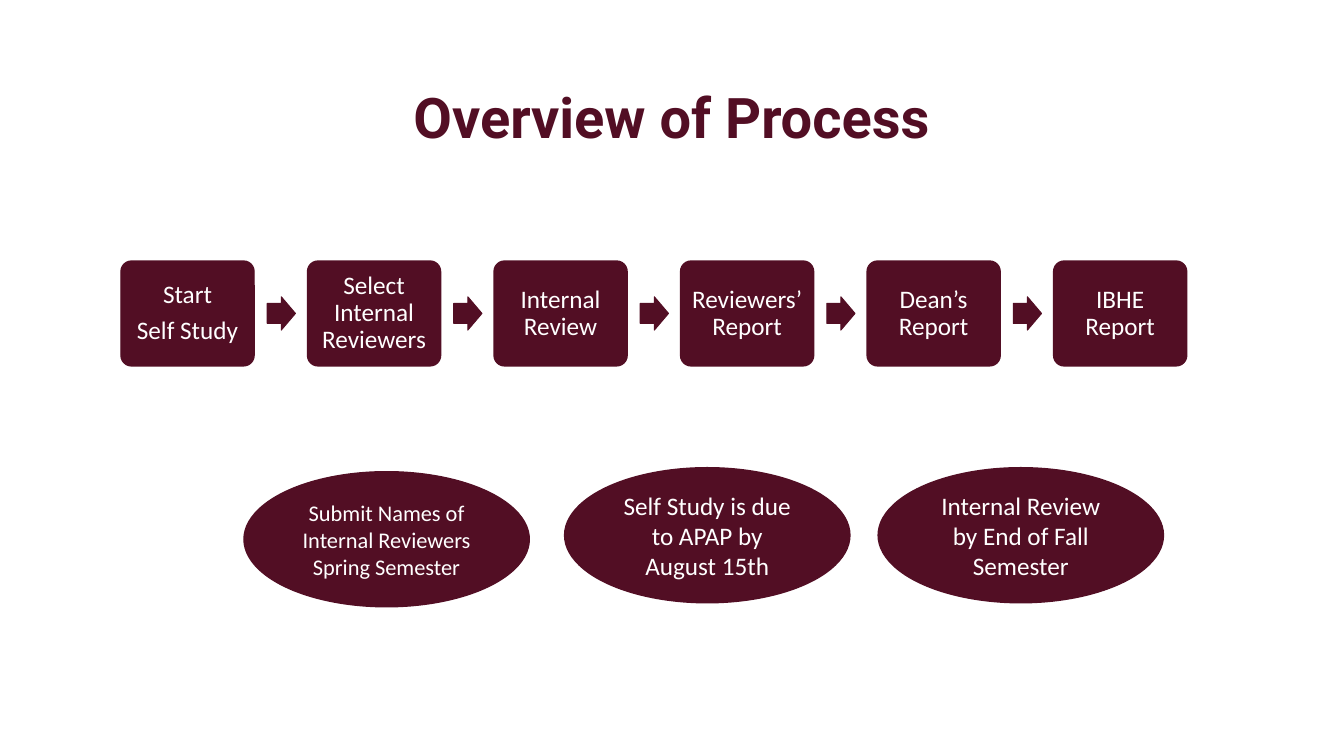
import dataclasses

import pptx
import pptx.dml.color
import pptx.enum.shapes
import pptx.enum.text
import pptx.util

Inches = pptx.util.Inches
Pt = pptx.util.Pt
Shapes = pptx.enum.shapes.MSO_SHAPE
Align = pptx.enum.text.PP_ALIGN
Anchor = pptx.enum.text.MSO_ANCHOR


@dataclasses.dataclass(frozen=True)
class Theme:
    """Colours, fonts and type sizes of the slide."""
    maroon: pptx.dml.color.RGBColor = pptx.dml.color.RGBColor(0x52, 0x0E, 0x24)
    white: pptx.dml.color.RGBColor = pptx.dml.color.RGBColor(0xFF, 0xFF, 0xFF)
    title_font: str = "Roboto"
    body_font: str = "Calibri"
    title_size: int = 40
    body_size: int = 18
    small_size: int = 16


THEME = Theme()

STEPS = [
    ["Start", "Self Study"],
    ["Select Internal Reviewers"],
    ["Internal Review"],
    ["Reviewers’ Report"],
    ["Dean’s Report"],
    ["IBHE Report"],
]
DEADLINES = [
    ("Submit Names of Internal Reviewers Spring Semester", 0, 0.04, THEME.small_size),
    ("Self Study is due to APAP by August 15th", 3.18, 0, THEME.body_size),
    ("Internal Review by End of Fall Semester", 6.29, 0, THEME.body_size),
]


def set_attributes(target, values):
    """Set each named format value on the target."""
    for name, value in values.items():
        setattr(target, name, value)


def write_text(frame, lines, font, paragraph_format, margins=None):
    """Write centred paragraphs in the middle of a text frame."""
    set_attributes(frame, {"word_wrap": True, "vertical_anchor": Anchor.MIDDLE,
                           **(margins or {})})
    frame.text = "\n".join(lines)
    for paragraph in frame.paragraphs:
        set_attributes(paragraph, {"alignment": Align.CENTER, **paragraph_format})
        set_attributes(paragraph.font, {key: value for key, value in font.items()
                                        if key != "color"})
        paragraph.font.color.rgb = font["color"]


def body_font(size):
    """Return the font values for text on a maroon shape."""
    return {"name": THEME.body_font, "size": Pt(size), "color": THEME.white}


def add_maroon_shape(slide, kind, box, line_width=1, adjustments=()):
    """Add a maroon preset shape in the given box."""
    shape = slide.shapes.add_shape(kind, *map(Inches, box))
    shape.shadow.inherit = False
    shape.fill.solid()
    shape.fill.fore_color.rgb = THEME.maroon
    shape.line.color.rgb = THEME.maroon
    shape.line.width = Pt(line_width)
    for index, value in enumerate(adjustments):
        shape.adjustments[index] = value
    return shape


def add_title(slide, box):
    """Place the slide title in the title placeholder."""
    title = slide.shapes.title
    set_attributes(title, dict(zip(("left", "top", "width", "height"), map(Inches, box))))
    font = {"name": THEME.title_font, "size": Pt(THEME.title_size), "bold": True,
            "color": THEME.maroon}
    write_text(title.text_frame, ["Overview of Process"], font, {"line_spacing": 0.9})


def add_process(slide, box):
    """Spread the process steps over the box, with an arrow in each gap."""
    left, top, width, height = box
    step_width, arrow_width, arrow_height = 1.32, 0.28, 0.33
    pitch = (width - step_width) / (len(STEPS) - 1)
    margins = {f"margin_{side}": Inches(0.07) for side in ("left", "top", "right", "bottom")}
    for index, lines in enumerate(STEPS):
        step_left = left + index * pitch
        step = add_maroon_shape(slide, Shapes.ROUNDED_RECTANGLE,
                                (step_left, top, step_width, height), adjustments=(0.1,))
        write_text(step.text_frame, lines, body_font(THEME.body_size),
                   {"line_spacing": 0.9, "space_after": Pt(6.3)}, margins)
        if index < len(STEPS) - 1:
            arrow_left = step_left + step_width + 0.13
            arrow_top = top + (height - arrow_height) / 2
            add_maroon_shape(slide, Shapes.RIGHT_ARROW,
                             (arrow_left, arrow_top, arrow_width, arrow_height),
                             0.75, (0.6, 0.5))


def add_deadlines(slide, box):
    """Place the deadline ellipses from the top left of the box."""
    left, top, width, height = box
    for text, across, down, size in DEADLINES:
        ellipse = add_maroon_shape(slide, Shapes.OVAL,
                                   (left + across, top + down, 2.83, height))
        write_text(ellipse.text_frame, [text], body_font(size), {})


def main():
    """Build the slide and save the presentation."""
    presentation = pptx.Presentation()
    set_attributes(presentation, {"slide_width": Inches(13.33), "slide_height": Inches(7.5)})
    slide = presentation.slides.add_slide(presentation.slide_layouts.get_by_name("Title Only"))
    add_title(slide, (0.85, 0.42, 11.62, 1.55))
    add_process(slide, (1.2, 2.59, 10.57, 1.04))
    add_deadlines(slide, (2.42, 4.64, 9.12, 1.34))
    presentation.save("out.pptx")


if __name__ == "__main__":
    main()
